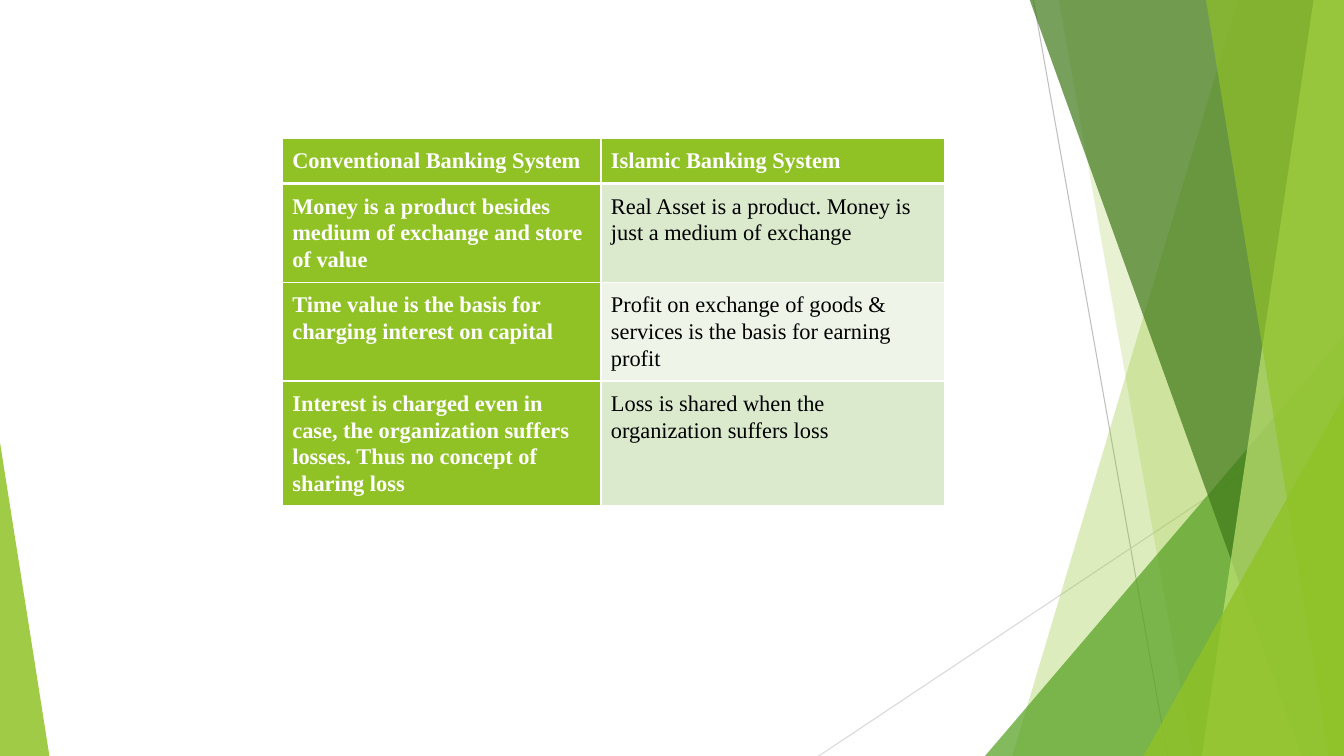
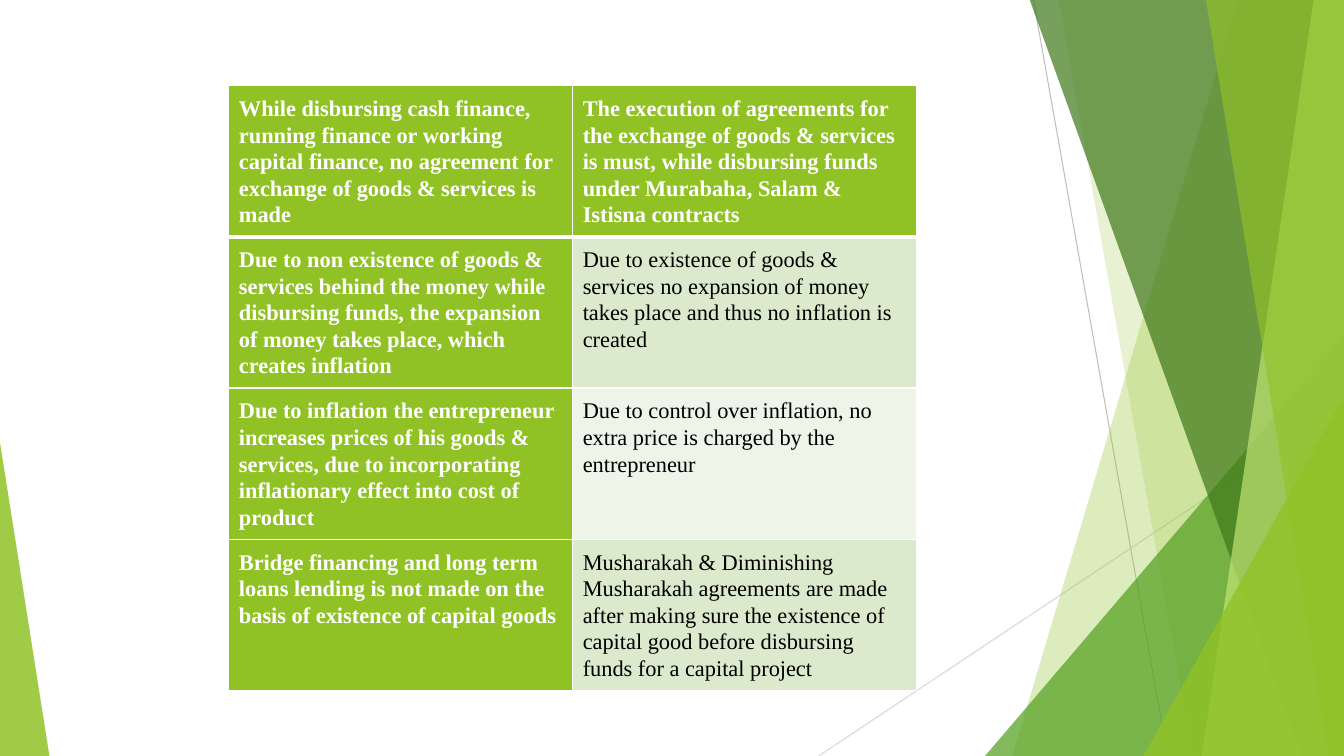
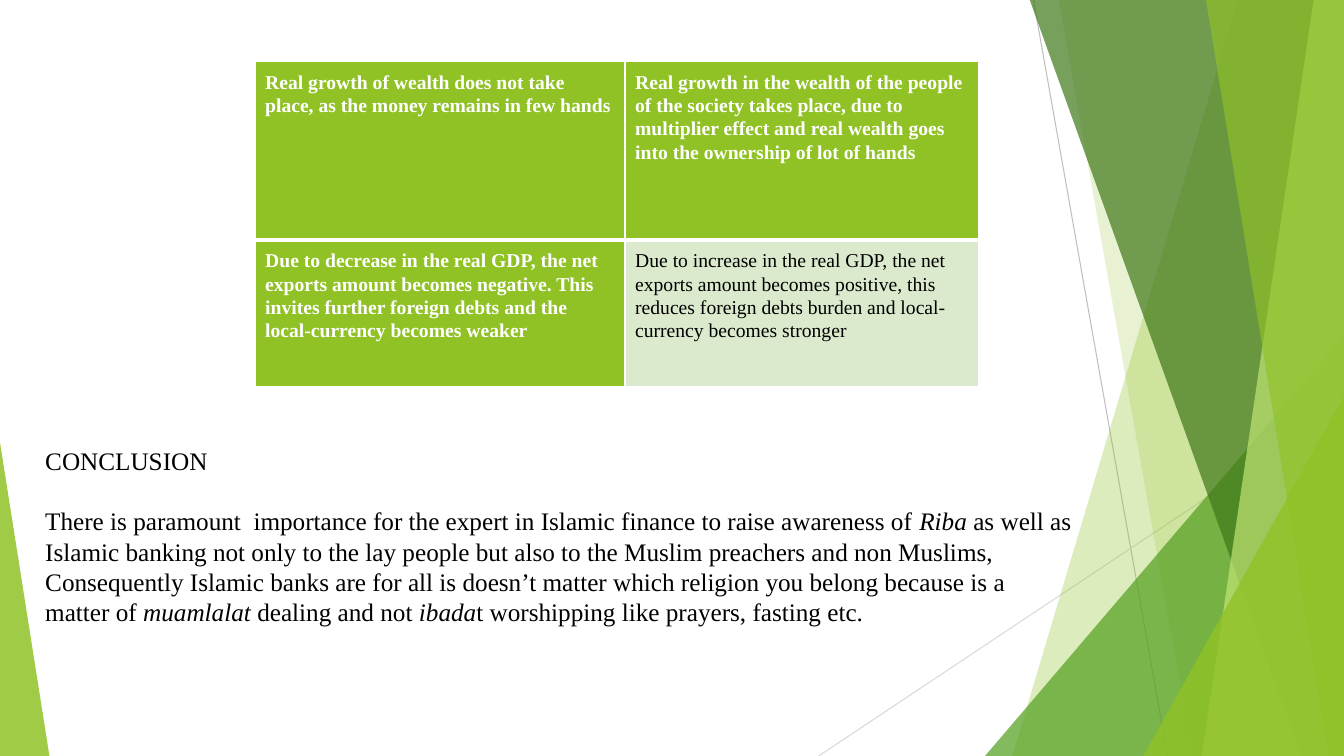
import pptx
import pptx.dml.color
import pptx.enum.shapes
import pptx.oxml
import pptx.oxml.ns
import pptx.util
from lxml import etree
from pptx.util import Inches

RGBColor = pptx.dml.color.RGBColor
qn = pptx.oxml.ns.qn

LIME = RGBColor(0x90, 0xC2, 0x26)
GREEN = RGBColor(0x54, 0xA0, 0x21)
FOREST = RGBColor(0x3F, 0x78, 0x19)
PALE_LIME = RGBColor(0xC0, 0xE4, 0x74)
BAND_DARK = RGBColor(0xDB, 0xE9, 0xCD)
BAND_LIGHT = RGBColor(0xEE, 0xF4, 0xE8)
RAY_GREY = RGBColor(0xBF, 0xBF, 0xBF)
RAY_LIGHT = RGBColor(0xD9, 0xD9, 0xD9)
WHITE = RGBColor(0xFF, 0xFF, 0xFF)
BLACK = RGBColor(0, 0, 0)
FONT = "Times New Roman"
WIDTH, HEIGHT = 13.33, 7.5
BLANK_LAYOUT = 6

RAYS = [
    ((10.25, 0), (11.58, HEIGHT), RAY_GREY),
    ((WIDTH, 4.03), (8.12, HEIGHT), RAY_LIGHT),
]
BACK_PANELS = [(12.28, 10.04, LIME, 30), (10.5, 11.83, LIME, 20)]
FRONT_PANELS = [
    (10.21, 12.91, FOREST, 70),
    (13.03, 11.92, PALE_LIME, 70),
    (11.96, 13.18, LIME, 65),
]

SYSTEMS = [
    ("Conventional Banking System", "Islamic Banking System"),
    ("Money is a product besides medium of exchange and store of value",
     "Real Asset is a product. Money is just a medium of exchange"),
    ("Time value is the basis for charging interest on capital",
     "Profit on exchange of goods & services is the basis for earning profit"),
    ("Interest is charged even in case, the organization suffers losses. "
     "Thus no concept of sharing loss",
     "Loss is shared when the organization suffers loss"),
]
FINANCING = [
    ("While disbursing cash finance, running finance or working capital "
     "finance, no agreement for exchange of goods & services is made",
     "The execution of agreements for the exchange of goods & services is "
     "must, while disbursing funds under Murabaha, Salam & Istisna contracts"),
    ("Due to non existence of goods & services behind the money while "
     "disbursing funds, the expansion of money takes place, which creates inflation",
     "Due to existence of goods & services no expansion of money takes place "
     "and thus no inflation is created"),
    ("Due to inflation the entrepreneur increases prices of his goods & "
     "services, due to incorporating inflationary effect into cost of product",
     "Due to control over inflation, no extra price is charged by the entrepreneur"),
    ("Bridge financing and long term loans lending is not made on the basis "
     "of existence of capital goods",
     "Musharakah & Diminishing Musharakah agreements are made after making "
     "sure the existence of capital good before disbursing funds for a capital project"),
]
GROWTH = [
    ("Real growth of wealth does not take place, as the money remains in few hands",
     "Real growth in the wealth of the people of the society takes place, due to "
     "multiplier effect and real wealth goes into the ownership of lot of hands"),
    ("Due to decrease in the real GDP, the net exports amount becomes negative. "
     "This invites further foreign debts and the local-currency becomes weaker",
     "Due to increase in the real GDP, the net exports amount becomes positive, "
     "this reduces foreign debts burden and local-currency becomes stronger"),
]
CONCLUSION = [
    [("CONCLUSION", False)],
    [("There is paramount  importance for the expert in Islamic finance to "
      "raise awareness of ", False),
     ("Riba ", True),
     ("as well as Islamic banking not only to the lay people but also to the "
      "Muslim preachers and non Muslims,", False)],
    [("Consequently Islamic banks are for all is doesn’t matter which religion "
      "you belong because is a matter of ", False),
     ("muamlalat", True),
     (" dealing and not ", False),
     ("ibada", True),
     ("t worshipping like prayers, fasting etc.", False)],
]


def tint(shape, color, opacity):
    shape.shadow.inherit = False
    shape.fill.solid()
    shape.fill.fore_color.rgb = color
    shape.line.fill.background()
    fill_color = next(shape.element.iter(qn("a:srgbClr")))
    etree.SubElement(fill_color, qn("a:alpha"), val=str(opacity * 1000))


def add_ray(group, start, end, color):
    ray = group.shapes.add_connector(
        pptx.enum.shapes.MSO_CONNECTOR.STRAIGHT,
        *(Inches(value) for value in (*start, *end)))
    ray.line.color.rgb = color
    ray.line.width = pptx.util.Pt(0.75)
    etree.SubElement(ray.element.spPr, qn("a:effectLst"))


def add_panel(group, top_x, bottom_x, color, opacity):
    top = -0.01
    corners = [(WIDTH, top), (WIDTH, HEIGHT), (bottom_x, HEIGHT)]
    builder = group.shapes.build_freeform(Inches(top_x), Inches(top))
    builder.add_line_segments([(Inches(x), Inches(y)) for x, y in corners])
    tint(builder.convert_to_shape(), color, opacity)


def add_peak(group, left, top, width, apex, color, opacity):
    peak = group.shapes.add_shape(
        pptx.enum.shapes.MSO_SHAPE.ISOSCELES_TRIANGLE,
        Inches(left), Inches(top), Inches(width), Inches(HEIGHT - top))
    peak.adjustments[0] = apex
    tint(peak, color, opacity)


def add_master_scenery(slide, master):
    scenery = slide.shapes.add_group_shape()
    for ray in RAYS:
        add_ray(scenery, *ray)
    for panel in BACK_PANELS:
        add_panel(scenery, *panel)
    add_peak(scenery, 9.77, 3.33, 3.56, 1, GREEN, 72)
    for panel in FRONT_PANELS:
        add_panel(scenery, *panel)
    add_peak(scenery, 11.34, 3.93, 1.99, 1, LIME, 80)
    add_peak(scenery, 0, 4.39, 0.49, 0, LIME, 85)
    for properties in scenery.element.iter(qn("p:cNvPr")):
        properties.set("id", str(int(properties.get("id")) + 100))
    master.shapes.element.insert(2, scenery.element)


def set_borders(cell, row):
    weights = {"lnL": 1, "lnR": 1,
               "lnT": 3 if row == 1 else 1,
               "lnB": 3 if row == 0 else 1}
    properties = cell._tc.get_or_add_tcPr()
    for side, weight in weights.items():
        border = etree.SubElement(properties, qn(f"a:{side}"),
                                  w=str(pptx.util.Pt(weight)))
        paint = etree.SubElement(border, qn("a:solidFill"))
        etree.SubElement(paint, qn("a:srgbClr"), val=str(WHITE))


def style_run(run, size, color, bold=False, italic=False):
    run.font.name = FONT
    run.font.size = pptx.util.Pt(size)
    run.font.color.rgb = color
    run.font.bold = bold
    run.font.italic = italic


def fill_cell(cell, text, row, column, size):
    emphasised = row == 0 or column == 0
    cell.margin_left = cell.margin_right = Inches(0.1)
    cell.margin_top = cell.margin_bottom = Inches(0.09)
    set_borders(cell, row)
    cell.fill.solid()
    band = BAND_DARK if row % 2 else BAND_LIGHT
    cell.fill.fore_color.rgb = LIME if emphasised else band
    paragraph = cell.text_frame.paragraphs[0]
    paragraph.text = text
    paragraph.line_spacing = 1.07
    paragraph.space_after = pptx.util.Pt(8)
    style_run(paragraph.runs[0], size, WHITE if emphasised else BLACK, emphasised)


def add_comparison(slide, left, top, widths, heights, rows, size):
    comparison = slide.shapes.add_table(
        len(rows), len(widths), Inches(left), Inches(top),
        Inches(sum(widths)), Inches(sum(heights))).table
    for column, width in zip(comparison.columns, widths):
        column.width = Inches(width)
    for line, height in zip(comparison.rows, heights):
        line.height = Inches(height)
    for row, texts in enumerate(rows):
        for column, text in enumerate(texts):
            fill_cell(comparison.cell(row, column), text, row, column, size)


def add_conclusion(slide, left, top, width, height):
    frame = slide.shapes.add_textbox(
        Inches(left), Inches(top), Inches(width), Inches(height)).text_frame
    frame.word_wrap = True
    for index, parts in enumerate(CONCLUSION):
        paragraph = frame.add_paragraph() if index else frame.paragraphs[0]
        for text, italic in parts:
            run = paragraph.add_run()
            run.text = text
            style_run(run, 18, BLACK, italic=italic)
    frame.paragraphs[0].space_after = pptx.util.Pt(21.5)


def main():
    deck = pptx.Presentation()
    deck.slide_width, deck.slide_height = Inches(WIDTH), Inches(HEIGHT)
    systems, financing, growth = (
        deck.slides.add_slide(deck.slide_layouts[BLANK_LAYOUT]) for _ in range(3))
    add_master_scenery(systems, deck.slide_master)
    add_comparison(systems, 2.8, 1.37, [3.16, 3.41],
                   [0.45, 0.98, 0.98, 1.24], SYSTEMS, 16)
    add_comparison(financing, 2.27, 0.85, [3.41, 3.41], [1.5] * 4, FINANCING, 16)
    add_comparison(growth, 2.53, 0.61, [3.67, 3.51], [1.77, 1.46], GROWTH, 14)
    add_conclusion(growth, 0.35, 4.37, 10.38, 1.92)
    deck.save("out.pptx")


if __name__ == "__main__":
    main()
